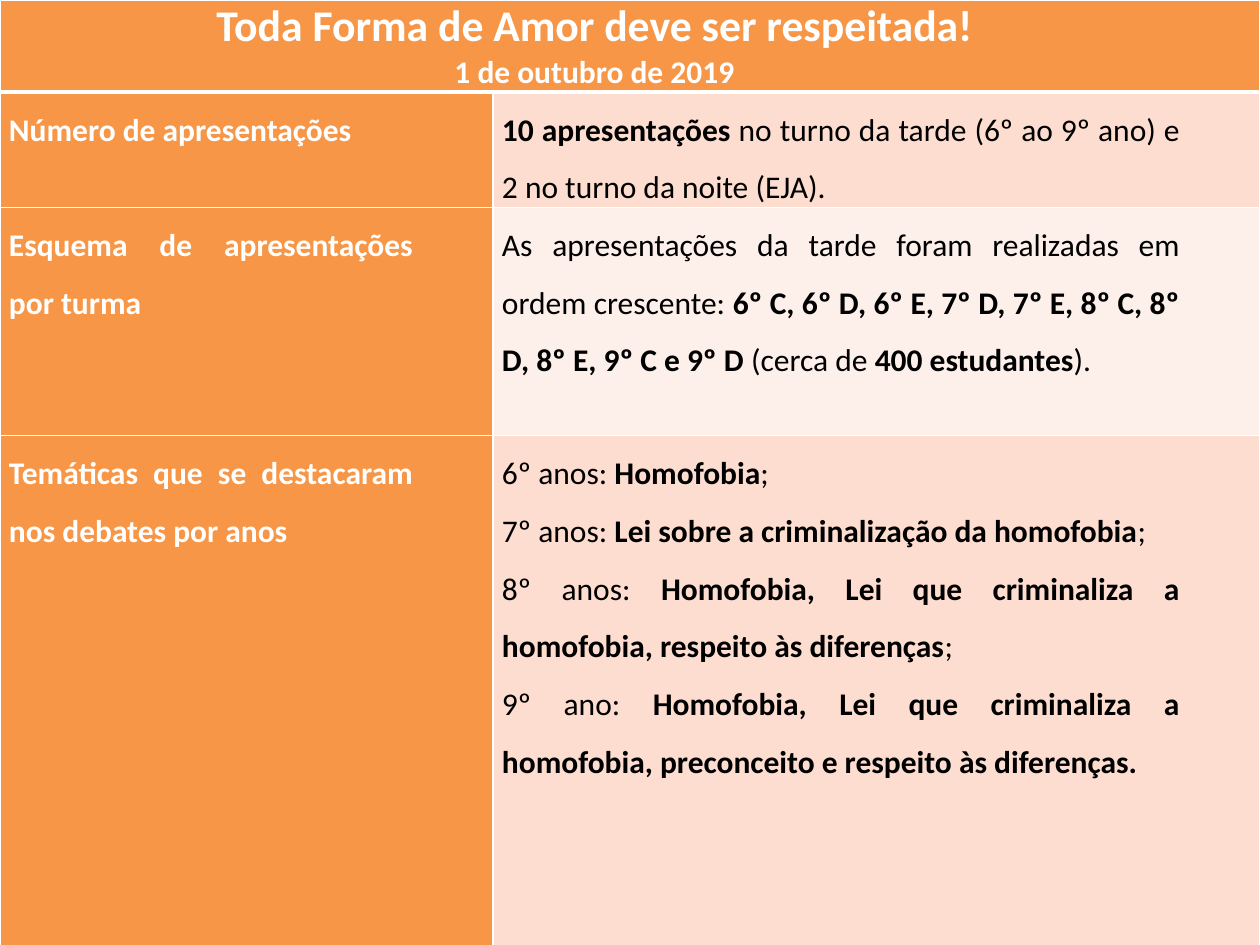
from lxml import etree
from pptx import Presentation
from pptx.dml.color import RGBColor
from pptx.enum.text import PP_ALIGN
from pptx.oxml.ns import qn
from pptx.util import Pt

EMU_PER_PX = 914400 / 126
CENTER, JUSTIFY = PP_ALIGN.CENTER, PP_ALIGN.JUSTIFY
WHITE = RGBColor(0xFF, 0xFF, 0xFF)
BLACK = RGBColor(0x00, 0x00, 0x00)
ORANGE = RGBColor(0xF7, 0x96, 0x46)
PEACH = RGBColor(0xFC, 0xDD, 0xCF)
CREAM = RGBColor(0xFD, 0xEF, 0xE9)

COLUMN_WIDTHS = [493, 767]
ROW_HEIGHTS = [84, 111, 228, 522]

HEADING = [("Toda Forma de Amor deve ser respeitada!", 25), ("1 de outubro de 2019", 18)]
TOPICS = [
    ("Número de apresentações", PEACH, [
        [("10 apresentações ", True),
         ("no turno da tarde (6º ao 9º ano) e 2 no turno da noite (EJA).", False)],
    ]),
    ("Esquema de apresentações por turma", CREAM, [
        [("As apresentações da tarde foram realizadas em ordem crescente: ", False),
         ("6º C, 6º D, 6º E, 7º D, 7º E, 8º C, 8º D, 8º E, 9º C e 9º D ", True),
         ("(cerca de ", False), ("400 estudantes", True), (").", False)],
    ]),
    ("Temáticas que se destacaram nos debates por anos", PEACH, [
        [("6º anos: ", False), ("Homofobia", True), (";", False)],
        [("7º anos: ", False), ("Lei sobre a criminalização da homofobia", True), (";", False)],
        [("8º anos: ", False),
         ("Homofobia, Lei que criminaliza a homofobia, respeito às diferenças", True),
         (";", False)],
        [("9º ano: ", False),
         ("Homofobia, Lei que criminaliza a homofobia, preconceito e respeito às diferenças.",
          True)],
    ]),
]


def px(length):
    return round(length * EMU_PER_PX)


def apply_format(target, values):
    for name, value in values.items():
        setattr(target, name, value)


class SlideBuilder:
    font_name = "Calibri"
    body_size = 18
    right_indent = 71
    cell_margins = {"margin_left": px(9), "margin_right": px(9),
                    "margin_top": 0, "margin_bottom": 0}
    heading_format = {"alignment": CENTER, "space_before": Pt(0.1)}
    body_format = {"alignment": JUSTIFY, "space_before": Pt(0.1), "line_spacing": 1.5}

    def __init__(self, slide):
        self.slide = slide

    def background(self, color):
        fill = self.slide.background.fill
        fill.solid()
        fill.fore_color.rgb = color

    def table(self, column_widths, row_heights):
        table = self.slide.shapes.add_table(
            len(row_heights), len(column_widths), 0, 0,
            px(sum(column_widths)), px(sum(row_heights))).table
        apply_format(table, {"first_row": False, "horz_banding": False})
        for column, width in zip(table.columns, column_widths):
            column.width = px(width)
        for row, height in zip(table.rows, row_heights):
            row.height = px(height)
        return table

    def borders(self, cell, bottom, top):
        properties = cell._tc.get_or_add_tcPr()
        for side, width in {"lnL": 1, "lnR": 1, "lnT": top, "lnB": bottom}.items():
            line = etree.SubElement(properties, qn("a:" + side), w=str(Pt(width)))
            fill = etree.SubElement(line, qn("a:solidFill"))
            etree.SubElement(fill, qn("a:srgbClr"), val=str(WHITE))

    def cell(self, cell, fill, bottom=1, top=1):
        apply_format(cell, self.cell_margins)
        self.borders(cell, bottom, top)
        cell.fill.solid()
        cell.fill.fore_color.rgb = fill

    def text(self, cell, paragraphs, color, paragraph_format):
        frame = cell.text_frame
        for index, runs in enumerate(paragraphs):
            paragraph = frame.add_paragraph() if index else frame.paragraphs[0]
            apply_format(paragraph, paragraph_format)
            paragraph._p.get_or_add_pPr().set("marR", str(px(self.right_indent)))
            for content, bold, size in runs:
                run = paragraph.add_run()
                run.text = content
                apply_format(run.font, {"name": self.font_name, "size": Pt(size), "bold": bold})
                run.font.color.rgb = color

    def heading(self, table, lines):
        left, right = table.cell(0, 0), table.cell(0, 1)
        left.merge(right)
        for cell in (left, right):
            self.cell(cell, ORANGE, bottom=3)
        self.text(left, [[(content, True, size)] for content, size in lines],
                  WHITE, self.heading_format)

    def topic(self, table, row, label, fill, details):
        label_cell, detail_cell = table.cell(row, 0), table.cell(row, 1)
        top = 3 if row == 1 else 1
        self.cell(label_cell, ORANGE, top=top)
        self.cell(detail_cell, fill, top=top)
        self.text(label_cell, [[(label, True, self.body_size)]], WHITE, self.body_format)
        sized = [[(content, bold, self.body_size) for content, bold in runs] for runs in details]
        self.text(detail_cell, sized, BLACK, self.body_format)


def main():
    deck = Presentation()
    apply_format(deck, {"slide_width": px(1260), "slide_height": px(945)})
    builder = SlideBuilder(deck.slides.add_slide(deck.slide_layouts[6]))
    builder.background(BLACK)
    table = builder.table(COLUMN_WIDTHS, ROW_HEIGHTS)
    builder.heading(table, HEADING)
    for row, (label, fill, details) in enumerate(TOPICS, start=1):
        builder.topic(table, row, label, fill, details)
    deck.save("out.pptx")


if __name__ == "__main__":
    main()
